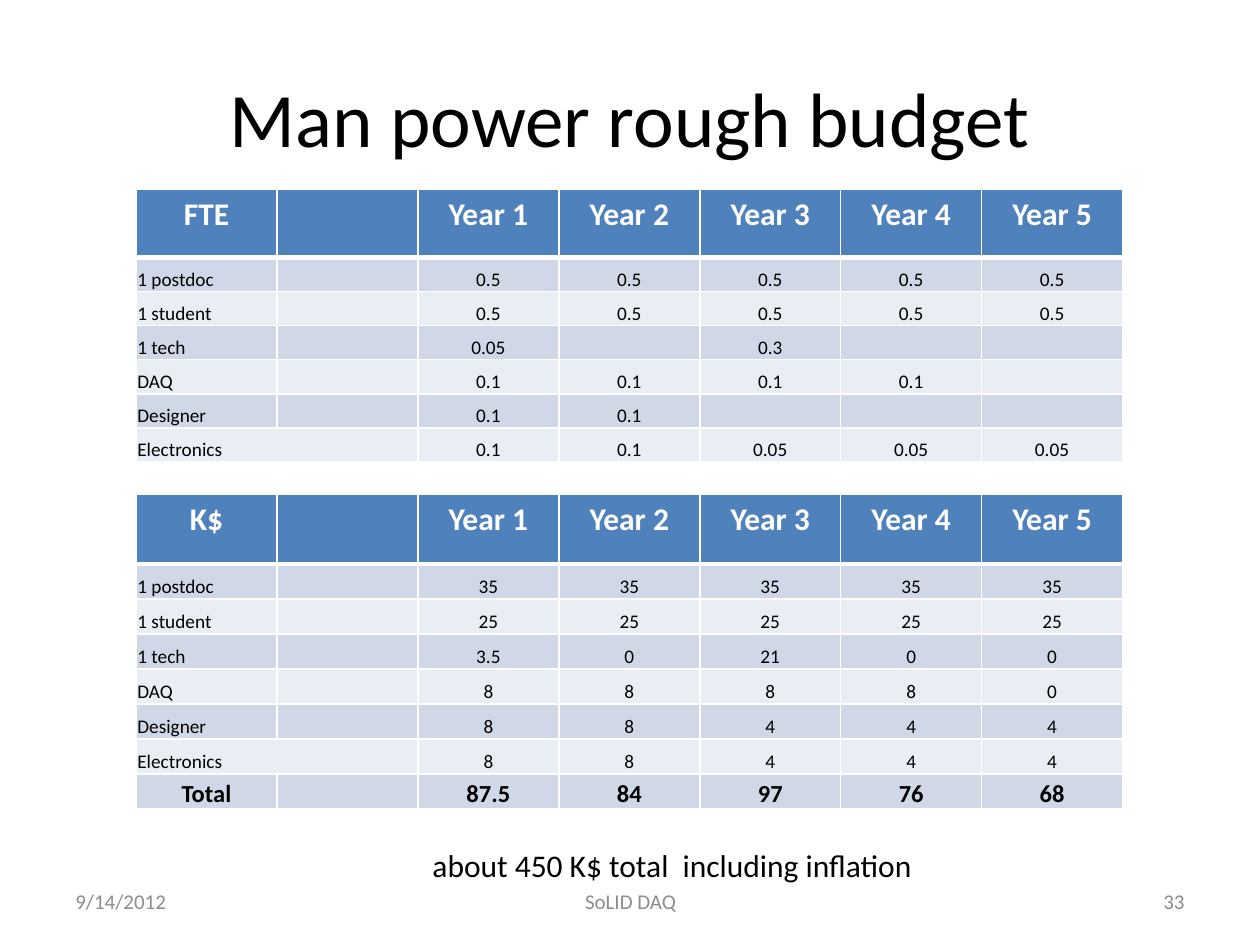
from lxml.etree import SubElement
from pptx import Presentation
from pptx.dml.color import RGBColor
from pptx.enum.text import MSO_ANCHOR, PP_ALIGN
from pptx.oxml.ns import qn
from pptx.util import Inches, Pt

W, H = 10, 7.5
COLORS = {"black": "000000", "white": "FFFFFF", "gray": "8C8C8C",
          "header": "4F81BD", "odd": "D0D8E8", "even": "E9EDF4"}
ALIGN = {"l": PP_ALIGN.LEFT, "c": PP_ALIGN.CENTER, "r": PP_ALIGN.RIGHT}
YEARS = [f"Year {n}" for n in range(1, 6)]
ROLES = ["1 postdoc", "1 student", "1 tech", "DAQ", "Designer", "Electronics"]
FTE = [["0.5"] * 5,
       ["0.5"] * 5,
       ["0.05", "", "0.3", "", ""],
       ["0.1", "0.1", "0.1", "0.1", ""],
       ["0.1", "0.1", "", "", ""],
       ["0.1", "0.1", "0.05", "0.05", "0.05"]]
COST = [["35"] * 5,
        ["25"] * 5,
        ["3.5", "0", "21", "0", "0"],
        ["8", "8", "8", "8", "0"],
        ["8", "8", "4", "4", "4"],
        ["8", "8", "4", "4", "4"]]
TOTAL = ["87.5", "84", "97", "76", "68"]


def rgb(name):
    return RGBColor.from_string(COLORS[name])


def write(tf, text, size=18, color="black", bold=False, align="c"):
    p = tf.paragraphs[0]
    p.alignment = ALIGN[align]
    if not text:
        SubElement(p._p, qn("a:endParaRPr"), sz=str(size * 100))
        return
    r = p.add_run()
    r.text = text
    r.font.name = "Calibri"
    r.font.size = Pt(size)
    r.font.bold = bold
    r.font.color.rgb = rgb(color)


def add_text(s, text, x, y, w, h, anchor=MSO_ANCHOR.MIDDLE, **fmt):
    sp = s.shapes.add_textbox(Inches(x * W), Inches(y * H),
                              Inches(w * W), Inches(h * H))
    tf = sp.text_frame
    tf.word_wrap = True
    tf.vertical_anchor = anchor
    write(tf, text, **fmt)


def set_borders(cell, **widths):
    tcPr = cell._tc.get_or_add_tcPr()
    for side in "LRTB":
        ln = SubElement(tcPr, qn(f"a:ln{side}"), w=str(Pt(widths.get(side, 1))))
        fill = SubElement(ln, qn("a:solidFill"))
        SubElement(fill, qn("a:srgbClr"), val=COLORS["white"])


def style_body(cell):
    cell.vertical_anchor = MSO_ANCHOR.BOTTOM
    cell.margin_left = cell.margin_right = cell.margin_top = Inches(0.01)
    cell.margin_bottom = 0


def add_budget(s, unit, values, top, height, total=None):
    rows = [[unit, "", *YEARS]]
    rows += [[role, "", *row] for role, row in zip(ROLES, values)]
    if total:
        rows.append(["Total", "", *total])
    n_cols = len(rows[0])
    table = s.shapes.add_table(len(rows), n_cols, Inches(1.08), Inches(top),
                               Inches(7.83), Inches(height)).table
    unit_height = Inches(height / (len(rows) + 1))
    for col in table.columns:
        col.width = Inches(7.83 / n_cols)
    for i, row in enumerate(rows):
        table.rows[i].height = unit_height * (2 if i == 0 else 1)
        for j, text in enumerate(row):
            cell = table.cell(i, j)
            set_borders(cell, T=3 if i == 1 else 1, B=3 if i == 0 else 1)
            cell.fill.solid()
            if i == 0:
                fill, fmt = "header", dict(color="white", bold=True)
            else:
                style_body(cell)
                fill = "odd" if i % 2 else "even"
                if row[0] == "Total":
                    fmt = dict(size=14, bold=True)
                else:
                    fmt = dict(size=11, align="c" if j else "l")
            cell.fill.fore_color.rgb = rgb(fill)
            write(cell.text_frame, text, **fmt)
    last_role = len(ROLES)
    table.cell(last_role, 0).merge(table.cell(last_role, 1))


def add_footer(s):
    for text, x, w, align in [("9/14/2012", 0.05, 0.233, "l"),
                              ("SoLID DAQ", 0.342, 0.317, "c"),
                              ("33", 0.717, 0.233, "r")]:
        add_text(s, text, x, 0.927, w, 0.053, size=12, color="gray", align=align)


def main():
    prs = Presentation()
    prs.slide_width, prs.slide_height = Inches(W), Inches(H)
    s = prs.slides.add_slide(prs.slide_layouts[6])
    add_text(s, "Man power rough budget", 0.05, 0.04, 0.9, 0.167, size=44)
    add_budget(s, "K$", COST, 3.92, 2.5, TOTAL)
    add_budget(s, "FTE", FTE, 1.5, 2.17)
    add_text(s, "about 450 K$ total  including inflation", 0.217, 0.889,
             0.633, 0.053, anchor=MSO_ANCHOR.TOP)
    add_footer(s)
    prs.save("out.pptx")


if __name__ == "__main__":
    main()
